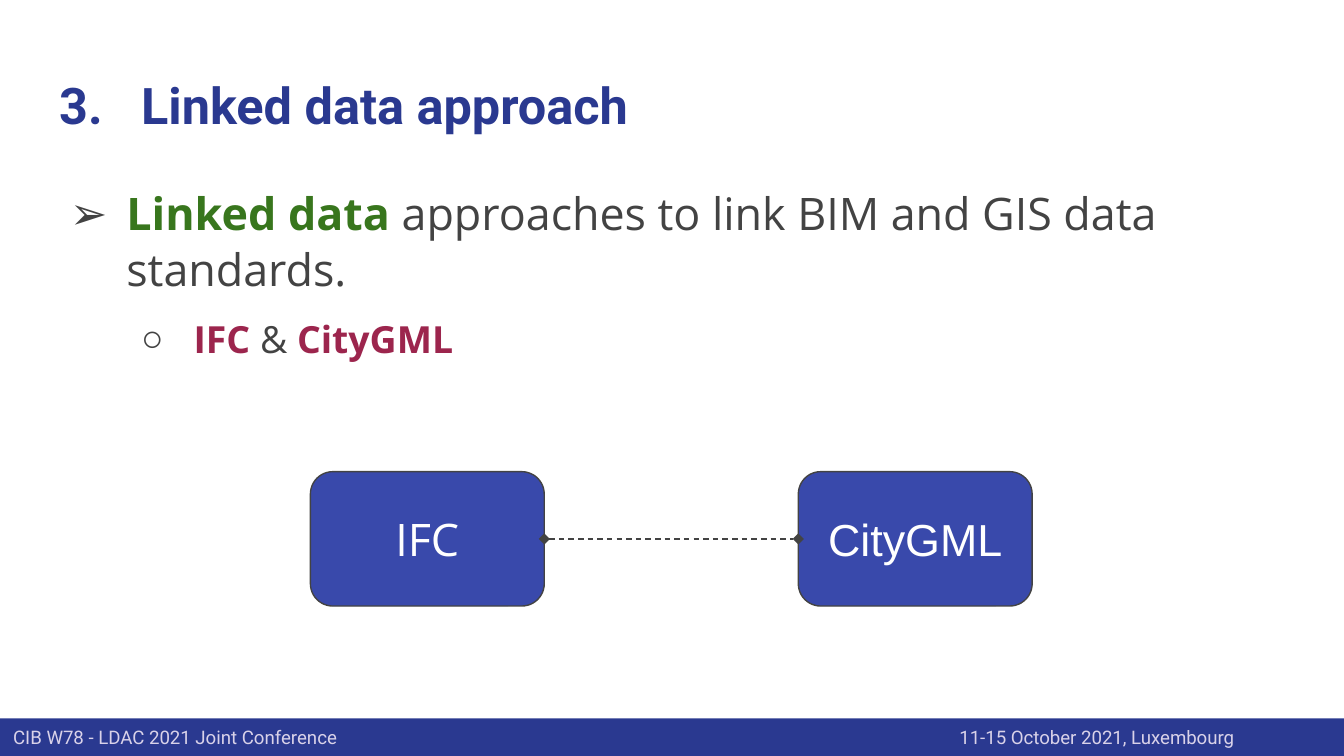
from dataclasses import dataclass

from lxml import etree
from pptx import Presentation
from pptx import util as u
from pptx.dml.color import RGBColor
from pptx.enum import dml, shapes, text
from pptx.oxml.ns import qn


@dataclass(frozen=True)
class Theme:
    navy: str = "2A3990"
    node: str = "3949AB"
    ink: str = "434343"
    green: str = "38761D"
    crimson: str = "9C254D"
    lilac: str = "D9D2E9"
    white: str = "FFFFFF"
    head_font: str = "Roboto"
    body_font: str = "Open Sans"
    plain_font: str = "Arial"
    title_size: int = 27
    large: int = 24
    medium: int = 20
    small: int = 10
    line: float = 0.75


@dataclass(frozen=True)
class Span:
    text: str
    size: int
    color: str
    font: str
    bold: bool = False


@dataclass(frozen=True)
class Bullet:
    char: str
    font: str
    level: int
    left: float
    hang: float
    before: int
    spans: tuple[Span, ...]


@dataclass(frozen=True)
class Node:
    left: float
    label: str
    font: str


T = Theme()
SLIDE_W = 10
SLIDE_H = SLIDE_W * 9 / 16
NODE_TOP, NODE_W, NODE_H = 3.51, 1.74, 1


def place(sp, left: float, top: float, width: float, height: float) -> None:
    sp.left, sp.top, sp.width, sp.height = map(u.Inches, (left, top, width, height))


def set_frame(tf, anchor) -> None:
    inset = u.Inches(0.1)
    fmt = {"margin_left": inset, "margin_right": inset, "margin_top": inset,
           "margin_bottom": inset, "word_wrap": True, "vertical_anchor": anchor,
           "auto_size": text.MSO_AUTO_SIZE.NONE}
    for name, value in fmt.items():
        setattr(tf, name, value)


def add_span(p, span: Span) -> None:
    r = p.add_run()
    r.text = span.text
    fmt = {"size": u.Pt(span.size), "name": span.font, "bold": span.bold}
    for name, value in fmt.items():
        setattr(r.font, name, value)
    r.font.color.rgb = RGBColor.from_string(span.color)


def set_indent(p, left: float, hang: float) -> None:
    pPr = p._p.get_or_add_pPr()
    pPr.set("marL", str(u.Inches(left)))
    pPr.set("indent", str(-u.Inches(hang)))


def add_tab(p, position: float) -> None:
    tabs = etree.SubElement(p._p.get_or_add_pPr(), qn("a:tabLst"))
    etree.SubElement(tabs, qn("a:tab"), pos=str(u.Inches(position)), algn="l")


def write_bullet(p, b: Bullet) -> None:
    p.level = b.level
    set_indent(p, b.left, b.hang)
    pPr = p._p.get_or_add_pPr()
    color = etree.SubElement(pPr, qn("a:buClr"))
    etree.SubElement(color, qn("a:srgbClr"), val=T.ink)
    etree.SubElement(pPr, qn("a:buFont"), typeface=b.font)
    etree.SubElement(pPr, qn("a:buChar"), char=b.char)
    p.line_spacing, p.space_before = 1.05, u.Pt(b.before)
    for span in b.spans:
        add_span(p, span)


def add_box(s, kind, box: tuple[float, ...], fill: str):
    sp = s.shapes.add_shape(kind, *map(u.Inches, box))
    sp.shadow.inherit = False
    sp.fill.solid()
    sp.fill.fore_color.rgb = RGBColor.from_string(fill)
    set_frame(sp.text_frame, text.MSO_ANCHOR.MIDDLE)
    return sp


def add_node(s, node: Node):
    sp = add_box(s, shapes.MSO_SHAPE.FLOWCHART_ALTERNATE_PROCESS,
                 (node.left, NODE_TOP, NODE_W, NODE_H), T.node)
    sp.line.color.rgb = RGBColor.from_string(T.ink)
    sp.line.width = u.Pt(T.line)
    p = sp.text_frame.paragraphs[0]
    p.alignment = text.PP_ALIGN.CENTER
    add_span(p, Span(node.label, T.large, T.white, node.font))
    return sp


def add_link(s, start, end) -> None:
    cx = s.shapes.add_connector(shapes.MSO_CONNECTOR.STRAIGHT, 0, 0, 0, 0)
    cx.begin_connect(start, 3)
    cx.end_connect(end, 1)
    cx.line.color.rgb = RGBColor.from_string(T.ink)
    cx.line.width = u.Pt(T.line)
    cx.line.dash_style = dml.MSO_LINE.DASH
    ln = cx.line._get_or_add_ln()
    for tag in ("a:headEnd", "a:tailEnd"):
        etree.SubElement(ln, qn(tag), type="diamond")
    etree.SubElement(cx._element.spPr, qn("a:effectLst"))


def main() -> None:
    prs = Presentation()
    prs.slide_width, prs.slide_height = u.Inches(SLIDE_W), u.Inches(SLIDE_H)
    s = prs.slides.add_slide(prs.slide_layouts[1])

    # Footer band
    band_h = 0.28
    band = add_box(s, shapes.MSO_SHAPE.RECTANGLE,
                   (0, SLIDE_H - band_h, SLIDE_W, band_h), T.navy)
    band.line.fill.background()
    p = band.text_frame.paragraphs[0]
    p.alignment = text.PP_ALIGN.LEFT
    add_tab(p, 7.04)
    add_span(p, Span("CIB W78 - LDAC 2021 Joint Conference\t11-15 October 2021, Luxembourg",
                     T.small, T.lilac, T.head_font))

    # Title
    title = s.shapes.title
    place(title, 0.34, 0.45, 9.32, 0.66)
    set_frame(title.text_frame, text.MSO_ANCHOR.TOP)
    p = title.text_frame.paragraphs[0]
    p.alignment = text.PP_ALIGN.LEFT
    set_indent(p, 0.61, 0.61)
    add_span(p, Span("3.\tLinked data approach", T.title_size, T.navy, T.head_font, True))

    # Bulleted list
    body = s.placeholders[1]
    place(body, 0.34, 1.26, 9.32, 1.72)
    tf = body.text_frame
    set_frame(tf, text.MSO_ANCHOR.TOP)
    bullets = (
        Bullet("➢", T.body_font, 0, 0.5, 0.42, 0, (
            Span("Linked data ", T.large, T.green, T.body_font, True),
            Span("approaches to link BIM and GIS data standards.",
                 T.large, T.ink, T.body_font))),
        Bullet("○", T.plain_font, 1, 1, 0.39, 10, (
            Span("IFC ", T.medium, T.crimson, T.body_font, True),
            Span("& ", T.medium, T.ink, T.body_font),
            Span("CityGML", T.medium, T.crimson, T.body_font, True))),
    )
    for i, bullet in enumerate(bullets):
        write_bullet(tf.add_paragraph() if i else tf.paragraphs[0], bullet)

    # Linked standards
    ifc, citygml = [add_node(s, node) for node in (
        Node(2.31, "IFC", T.body_font), Node(5.94, "CityGML", T.plain_font))]
    add_link(s, ifc, citygml)

    prs.save("out.pptx")


if __name__ == "__main__":
    main()
